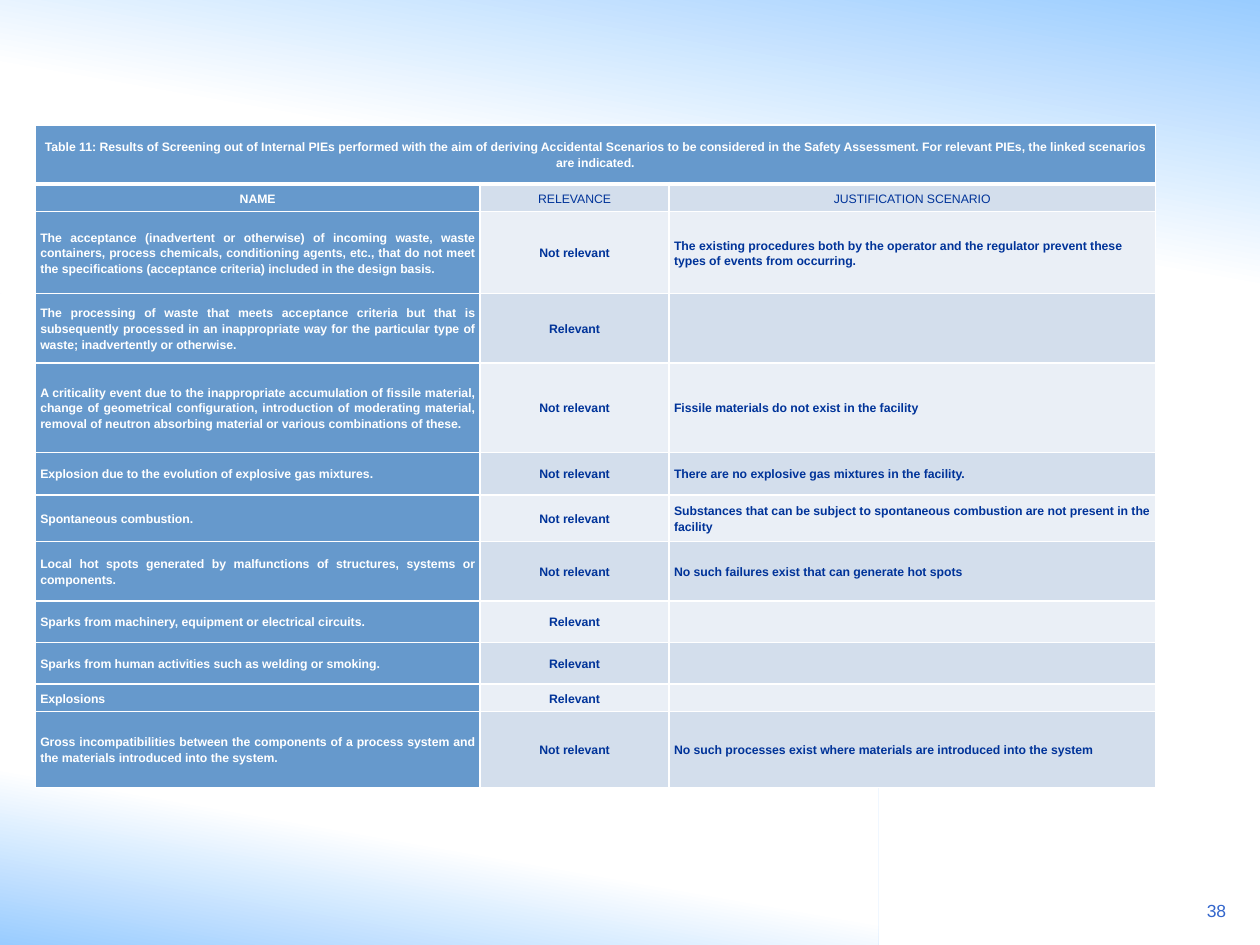
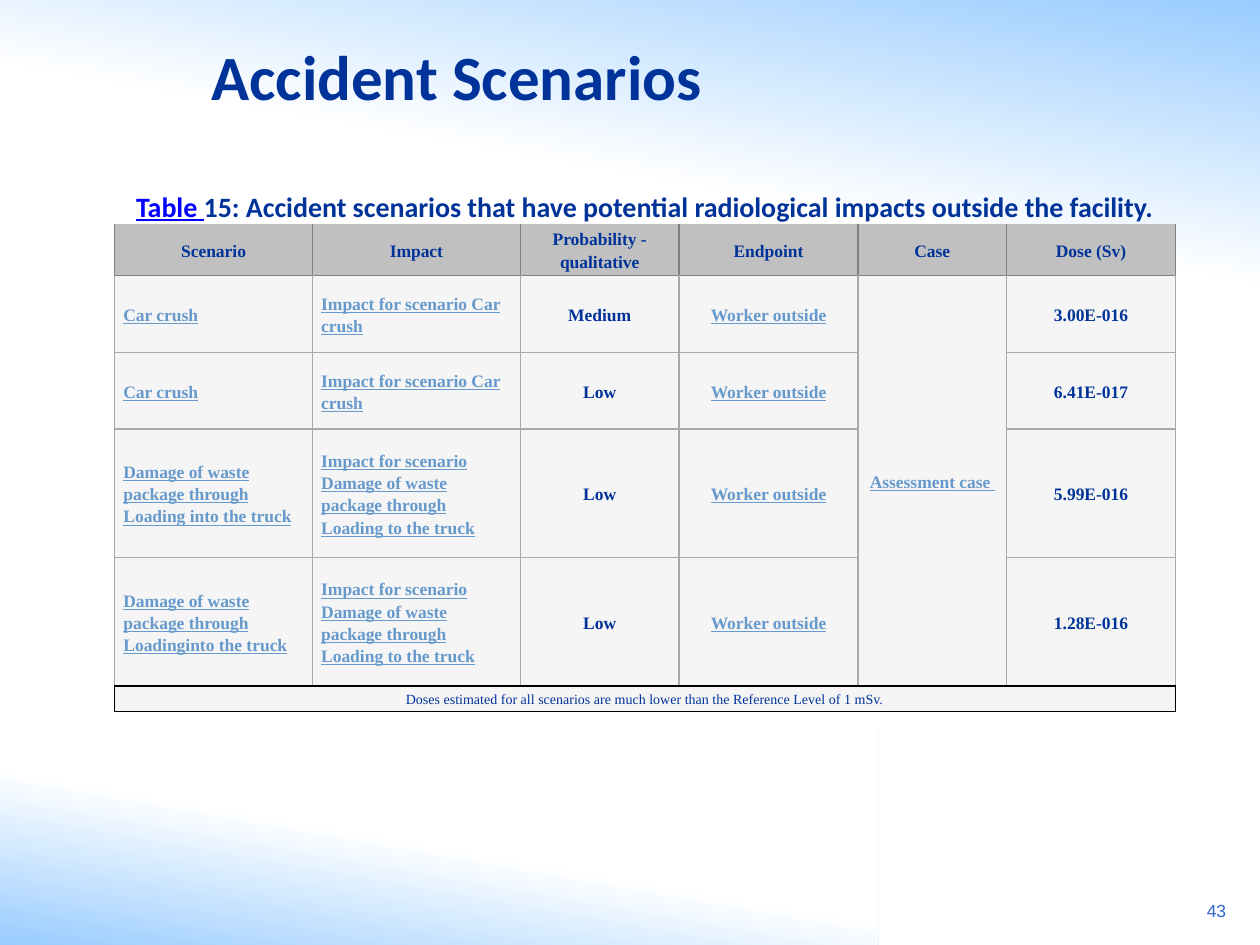
"""Build the two slides that tabulate screening results and accident scenarios."""
from dataclasses import dataclass, field, replace
from typing import Optional

import lxml.etree
import pptx
import pptx.dml.color
import pptx.enum.shapes
import pptx.enum.text
import pptx.oxml.ns
import pptx.presentation
import pptx.shapes.autoshape
import pptx.slide
import pptx.table
import pptx.text.text
import pptx.util

Inches = pptx.util.Inches
RGBColor = pptx.dml.color.RGBColor
Align = pptx.enum.text.PP_ALIGN
Middle = pptx.enum.text.MSO_ANCHOR.MIDDLE
qn = pptx.oxml.ns.qn

WHITE = RGBColor(0xFF, 0xFF, 0xFF)
BLACK = RGBColor(0x00, 0x00, 0x00)
SKY = RGBColor(0x99, 0xCC, 0xFF)
STEEL = RGBColor(0x66, 0x99, 0xCC)
NAVY = RGBColor(0x00, 0x33, 0x99)
NUMBER_BLUE = RGBColor(0x33, 0x66, 0xCC)
LINK_BLUE = RGBColor(0x00, 0x00, 0xFF)
BAND_DARK = RGBColor(0xD3, 0xDE, 0xEC)
BAND_LIGHT = RGBColor(0xEA, 0xEF, 0xF6)
HEADER_GRAY = RGBColor(0xC0, 0xC0, 0xC0)
CELL_GRAY = RGBColor(0xF5, 0xF5, 0xF5)
LINE_DARK = RGBColor(0x80, 0x80, 0x80)
LINE_GRAY = RGBColor(0xA9, 0xA9, 0xA9)
PLAIN_STYLE = "{2D5ABB26-0587-4C30-8999-92F81FD0307C}"


@dataclass(frozen=True)
class Look:
    """Character formatting of a span."""
    size: float
    font: str
    color: RGBColor
    bold: bool = True
    underline: bool = False


@dataclass(frozen=True)
class Edge:
    """A cell border line."""
    color: RGBColor
    width: float = 1


@dataclass(frozen=True)
class Cell:
    """One table cell with its spans, fill and edges."""
    spans: tuple[tuple[str, Look], ...]
    fill: Optional[RGBColor]
    edges: dict[str, Edge] = field(default_factory=dict)
    align: Align = Align.CENTER
    after: float = 10
    rows: int = 1
    columns: int = 1


@dataclass(frozen=True)
class Grid:
    """A table's place, track sizes and cell margins."""
    left: float
    top: float
    widths: tuple[float, ...]
    heights: tuple[float, ...]
    margin_x: float
    margin_y: float


@dataclass(frozen=True)
class Glow:
    """A background rectangle fading from sky blue to white."""
    left: float
    top: float
    width: float
    height: float
    white_at: float
    angle: float


GLOWS = (Glow(0, 5.8, 6.97, 1.7, 0.48, 80), Glow(0, 0, 10, 2.33, 0.56, 260))
TITLE = Look(36, "Calibri", NAVY)
NUMBER = Look(10, "Arial", NUMBER_BLUE, bold=False)
ON_STEEL = Look(7, "Arial", WHITE)
ON_BAND = replace(ON_STEEL, color=NAVY)
CAPTION = Look(16, "Calibri", NAVY)
CAPTION_LINK = replace(CAPTION, color=LINK_BLUE, underline=True)
SERIF = Look(10, "Times New Roman", NAVY)
SERIF_LINK = replace(SERIF, color=STEEL, underline=True)
NOTE = replace(SERIF, size=8, bold=False)

SCREENING_GRID = Grid(
    0.28, 0.99, (3.53, 1.5, 3.86),
    (0.47, 0.22, 0.65, 0.55, 0.71, 0.34, 0.37, 0.47, 0.33, 0.33, 0.22, 0.6), 0.04, 0.04)
SCREENING_CAPTION = (
    "Table 11: Results of Screening out of Internal PIEs performed with the aim of deriving "
    "Accidental Scenarios to be considered in the Safety Assessment. For relevant PIEs, "
    "the linked scenarios are indicated.")
SCREENING = (
    ("The acceptance (inadvertent or otherwise) of incoming waste, waste containers, process "
     "chemicals, conditioning agents, etc., that do not meet the specifications (acceptance "
     "criteria) included in the design basis.", "Not relevant",
     "The existing procedures both by the operator and the regulator prevent these types of "
     "events from occurring."),
    ("The processing of waste that meets acceptance criteria but that is subsequently processed "
     "in an inappropriate way for the particular type of waste; inadvertently or otherwise.",
     "Relevant", ""),
    ("A criticality event due to the inappropriate accumulation of fissile material, change of "
     "geometrical configuration, introduction of moderating material, removal of neutron "
     "absorbing material or various combinations of these.", "Not relevant",
     "Fissile materials do not exist in the facility"),
    ("Explosion due to the evolution of explosive gas mixtures.", "Not relevant",
     "There are no explosive gas mixtures in the facility."),
    ("Spontaneous combustion.", "Not relevant",
     "Substances that can be subject to spontaneous combustion are not present in the facility"),
    ("Local hot spots generated by malfunctions of structures, systems or components.",
     "Not relevant", "No such failures exist that can generate hot spots"),
    ("Sparks from machinery, equipment or electrical circuits.", "Relevant", ""),
    ("Sparks from human activities such as welding or smoking.", "Relevant", ""),
    ("Explosions", "Relevant", ""),
    ("Gross incompatibilities between the components of a process system and the materials "
     "introduced into the system.", "Not relevant",
     "No such processes exist where materials are introduced into the system"),
)

ACCIDENT_GRID = Grid(
    0.91, 1.47, (1.57, 1.65, 1.26, 1.42, 1.18, 1.34),
    (0.25, 0.41, 0.61, 0.61, 1.02, 1.02, 0.2), 0.07, 0)
ACCIDENT_HEADERS = ("Scenario", "Impact", "Probability - qualitative", "Endpoint", "Case",
                    "Dose (Sv)")
CAR_IMPACT = "Impact for scenario Car crush"
DAMAGE_IMPACT = "Impact for scenario Damage of waste package through Loading to the truck"
ACCIDENTS = (
    ("Car crush", CAR_IMPACT, "Medium", "3.00E-016"),
    ("Car crush", CAR_IMPACT, "Low", "6.41E-017"),
    ("Damage of waste package through Loading into the truck", DAMAGE_IMPACT, "Low",
     "5.99E-016"),
    ("Damage of waste package through Loadinginto the truck", DAMAGE_IMPACT, "Low",
     "1.28E-016"),
)


def add_span(para: pptx.text.text._Paragraph, text: str, look: Look) -> None:
    """Append one formatted run to a paragraph."""
    span = para.add_run()
    span.text = text
    span.font.size = pptx.util.Pt(look.size)
    span.font.name = look.font
    span.font.color.rgb = look.color
    span.font.bold = look.bold
    span.font.underline = look.underline


def add_text(page: pptx.slide.Slide, left: float, top: float, width: float, height: float,
             text: str, look: Look, align: Align) -> pptx.shapes.autoshape.Shape:
    """Add a wrapped text box holding one span."""
    box = page.shapes.add_textbox(Inches(left), Inches(top), Inches(width), Inches(height))
    box.text_frame.word_wrap = True
    para = box.text_frame.paragraphs[0]
    para.alignment = align
    add_span(para, text, look)
    return box


def add_page(deck: pptx.presentation.Presentation, number: int) -> pptx.slide.Slide:
    """Add a blank page with the background glows and its number."""
    page = deck.slides.add_slide(deck.slide_layouts[6])
    for glow in GLOWS:
        band = page.shapes.add_shape(
            pptx.enum.shapes.MSO_SHAPE.RECTANGLE, Inches(glow.left), Inches(glow.top),
            Inches(glow.width), Inches(glow.height))
        band.shadow.inherit = False
        band.line.fill.background()
        band.fill.gradient()
        band.fill.gradient_angle = glow.angle
        start, end = band.fill.gradient_stops
        start.color.rgb, start.position = SKY, 0
        end.color.rgb, end.position = WHITE, glow.white_at
    add_text(page, 9.27, 7.09, 0.56, 0.32, str(number), NUMBER, Align.RIGHT)
    return page


def set_edges(cell: pptx.table._Cell, edges: dict[str, Edge]) -> None:
    """Draw the borders of a cell, keyed by side letter."""
    properties = cell._tc.get_or_add_tcPr()
    present = [side for side in "LRTB" if side in edges]
    for position, side in enumerate(present):
        line = lxml.etree.Element(
            qn(f"a:ln{side}"), w=str(pptx.util.Pt(edges[side].width)))
        solid = lxml.etree.SubElement(line, qn("a:solidFill"))
        lxml.etree.SubElement(solid, qn("a:srgbClr"), val=str(edges[side].color))
        properties.insert(position, line)


def fill_cell(cell: pptx.table._Cell, content: Cell) -> None:
    """Write the text, fill and borders of a cell."""
    if content.fill is None:
        cell.fill.background()
    else:
        cell.fill.solid()
        cell.fill.fore_color.rgb = content.fill
    set_edges(cell, content.edges)
    para = cell.text_frame.paragraphs[0]
    para.alignment = content.align
    para.line_spacing = 1.15
    para.space_after = pptx.util.Pt(content.after)
    for text, look in content.spans:
        add_span(para, text, look)


def add_grid(page: pptx.slide.Slide, grid: Grid, rows: list[list[Optional[Cell]]]) -> None:
    """Add a table; None marks a cell covered by a span."""
    table = page.shapes.add_table(
        len(grid.heights), len(grid.widths), Inches(grid.left), Inches(grid.top),
        Inches(sum(grid.widths)), Inches(sum(grid.heights))).table
    table.first_row = table.horz_banding = False
    table._tbl.tblPr.find(qn("a:tableStyleId")).text = PLAIN_STYLE
    for column, width in zip(table.columns, grid.widths):
        column.width = Inches(width)
    for row, height in zip(table.rows, grid.heights):
        row.height = Inches(height)
    for top, contents in enumerate(rows):
        for left, content in enumerate(contents):
            cell = table.cell(top, left)
            cell.vertical_anchor = Middle
            cell.margin_left = cell.margin_right = Inches(grid.margin_x)
            cell.margin_top = cell.margin_bottom = Inches(grid.margin_y)
            if content:
                fill_cell(cell, content)
                if content.rows * content.columns > 1:
                    cell.merge(table.cell(top + content.rows - 1, left + content.columns - 1))
            if not content or not content.spans:
                para = cell.text_frame.paragraphs[0]
                lxml.etree.SubElement(para._p, qn("a:endParaRPr"), sz="700")


def screening_rows() -> list[list[Optional[Cell]]]:
    """Lay out the screening table."""
    edges = dict.fromkeys("LRTB", Edge(WHITE))
    thick = Edge(WHITE, 3)
    under_caption = edges | {"T": thick}
    plain = replace(ON_BAND, bold=False)
    rows = [
        [Cell(((SCREENING_CAPTION, ON_STEEL),), STEEL, edges | {"B": thick}, after=0,
              columns=3), None, None],
        [Cell((("NAME", ON_STEEL),), STEEL, under_caption),
         Cell((("RELEVANCE", plain),), BAND_DARK, under_caption),
         Cell((("JUSTIFICATION SCENARIO", plain),), BAND_DARK, under_caption)],
    ]
    for index, (name, relevance, reason) in enumerate(SCREENING):
        band = BAND_DARK if index % 2 else BAND_LIGHT
        rows.append([
            Cell(((name, ON_STEEL),), STEEL, edges, Align.JUSTIFY),
            Cell(((relevance, ON_BAND),), band, edges),
            Cell(((reason, ON_BAND),) if reason else (), band, edges, Align.LEFT)])
    return rows


def accident_rows() -> list[list[Optional[Cell]]]:
    """Lay out the accident scenario table."""
    covered = [None] * 5
    caption = (("Table ", CAPTION_LINK),
               ("15: Accident scenarios that have potential radiological impacts outside the "
                "facility.", CAPTION))
    rows = [
        [Cell(caption, None, after=0, columns=6), *covered],
        [Cell(((header, SERIF),), HEADER_GRAY, dict.fromkeys("LRB", Edge(LINE_DARK)))
         for header in ACCIDENT_HEADERS],
    ]
    gray = dict.fromkeys("LRTB", Edge(LINE_GRAY))
    first, last = {"T": Edge(LINE_DARK)}, {"B": Edge(BLACK)}
    case = Cell((("Assessment case ", SERIF_LINK),), CELL_GRAY, gray | first | last,
                rows=len(ACCIDENTS))
    for index, (scenario, impact, probability, dose) in enumerate(ACCIDENTS):
        edges = gray | (first if index == 0 else {})
        edges |= last if index == len(ACCIDENTS) - 1 else {}
        rows.append([
            Cell(((scenario, SERIF_LINK),), CELL_GRAY, edges, Align.LEFT),
            Cell(((impact, SERIF_LINK),), CELL_GRAY, edges, Align.LEFT),
            Cell(((probability, SERIF),), CELL_GRAY, edges),
            Cell((("Worker outside", SERIF_LINK),), CELL_GRAY, edges),
            None if index else case,
            Cell(((dose, SERIF),), CELL_GRAY, edges)])
    note = "Doses estimated for all scenarios are much lower than the Reference Level of 1 mSv."
    rows.append([Cell(((note, NOTE),), CELL_GRAY, dict.fromkeys("LRTB", Edge(BLACK)),
                      columns=6), *covered])
    return rows


def main() -> None:
    """Build and save the deck."""
    deck = pptx.Presentation()
    deck.slide_width, deck.slide_height = Inches(10), Inches(7.5)
    add_grid(add_page(deck, 38), SCREENING_GRID, screening_rows())
    page = add_page(deck, 43)
    title = add_text(page, 0.28, 0.13, 6.69, 0.94, "Accident Scenarios", TITLE, Align.CENTER)
    title.text_frame.vertical_anchor = Middle
    add_grid(page, ACCIDENT_GRID, accident_rows())
    deck.save("out.pptx")


if __name__ == "__main__":
    main()
